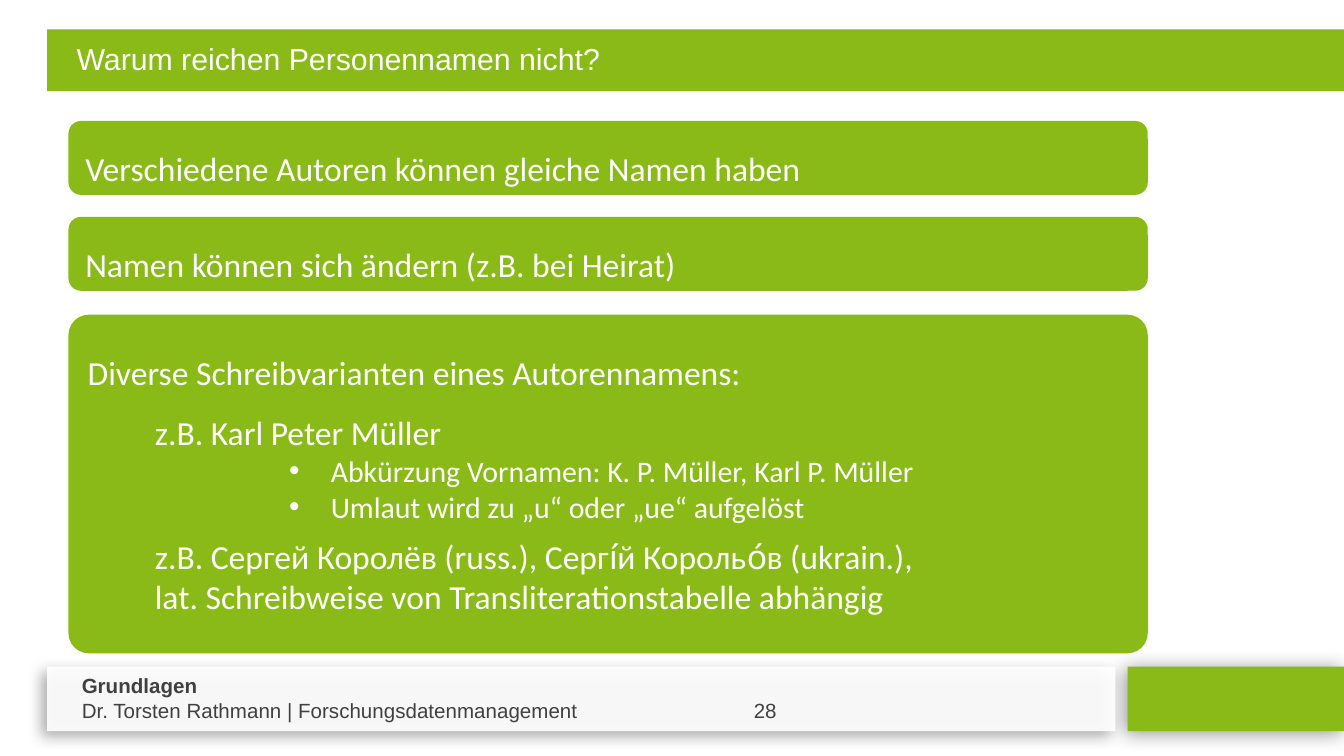
from lxml import etree
from pptx import Presentation
from pptx.dml.color import RGBColor
from pptx.enum.shapes import MSO_SHAPE
from pptx.enum.text import MSO_ANCHOR, MSO_AUTO_SIZE, PP_ALIGN
from pptx.oxml.ns import qn
from pptx.util import Pt

RECT, ROUND = MSO_SHAPE.RECTANGLE, MSO_SHAPE.ROUNDED_RECTANGLE
TOP, MIDDLE = MSO_ANCHOR.TOP, MSO_ANCHOR.MIDDLE
LEFT = PP_ALIGN.LEFT
FIXED = MSO_AUTO_SIZE.NONE

THEME = {
    "green": "89BA17", "white": "FFFFFF", "grey": "404040", "black": "000000",
    "head": "Arial", "body": "Calibri",
    "title": 16.2, "text": 18, "sub": 16, "foot": 11,
}

TITLE = "Warum reichen Personennamen nicht?"
FOOT = ["Grundlagen", "Dr. Torsten Rathmann | Forschungsdatenmanagement\t28"]

# Each paragraph: text, kind
CARDS = [
    {"top": 64.8, "high": 39.6, "round": 0.17, "paras": [
        ("Verschiedene Autoren können gleiche Namen haben", "wide")]},
    {"top": 116.2, "high": 39.6, "round": 0.17, "paras": [
        ("Namen können sich ändern (z.B. bei Heirat)", "wide")]},
    {"top": 168.6, "high": 181.4, "round": 0.06, "paras": [
        ("Diverse Schreibvarianten eines Autorennamens:", "plain"),
        ("z.B. Karl Peter Müller", "case"),
        ("Abkürzung Vornamen: K. P. Müller, Karl P. Müller", "bullet"),
        ("Umlaut wird zu „u“ oder „ue“ aufgelöst", "bullet"),
        ("z.B. Сергей Королёв (russ.), Сергі́й Корольо́в (ukrain.),\v"
         "lat. Schreibweise von Transliterationstabelle abhängig", "last")]},
]
KINDS = {
    "plain": {},
    "wide": {"lines": 1.5},
    "case": {"lines": 1.5, "margin": 36},
    "bullet": {"margin": 130.3, "hang": -22.3, "level": 4, "size": "sub"},
    "last": {"margin": 36, "before": 6},
}


def color(name):
    return RGBColor.from_string(THEME[name])


def child(node, tag, **attrs):
    return etree.SubElement(node, qn(tag), attrs)


def block(slide, kind, box, fill):
    shape = slide.shapes.add_shape(kind, *map(Pt, box))
    shape.shadow.inherit = False
    shape.fill.solid()
    shape.fill.fore_color.rgb = color(fill)
    shape.line.fill.background()
    return shape


def shade(shape, alpha, blur, dist, angle):
    """Give the shape an outer shadow; alpha in percent, angle in degrees."""
    effects = shape._element.spPr.find(qn("a:effectLst"))
    outer = child(effects, "a:outerShdw", blurRad=str(Pt(blur)),
                  dist=str(Pt(dist)), dir=str(angle * 60000),
                  algn="ctr", rotWithShape="0")
    tint = child(outer, "a:srgbClr", val=THEME["black"])
    child(tint, "a:alpha", val=str(alpha * 1000))


def style(para, face, size, tone, bold=False):
    para.alignment = LEFT
    font = para.font
    font.name, font.size = THEME[face], Pt(THEME[size])
    font.color.rgb, font.bold = color(tone), bold


def indent(para, margin, first=0):
    props = para._p.get_or_add_pPr()
    props.set("marL", str(Pt(margin)))
    props.set("indent", str(Pt(first)))
    return props


def fill_card(frame, paras):
    frame.word_wrap = True
    frame.vertical_anchor = MIDDLE
    for i, (text, kind) in enumerate(paras):
        para = frame.paragraphs[0] if i == 0 else frame.add_paragraph()
        para.text = text
        look = KINDS[kind]
        para.level = look.get("level", 0)
        props = indent(para, look.get("margin", 0), look.get("hang", 0))
        if kind == "bullet":
            child(props, "a:buFont", typeface="Arial")
            child(props, "a:buChar", char="•")
        para.line_spacing = look.get("lines", 1.0)
        para.space_before = Pt(look.get("before", 0))
        style(para, "body", look.get("size", "text"), "white")


def add_title(slide):
    block(slide, RECT, (25.2, 15.8, 697.7, 33.1), "green")
    title = slide.shapes.title
    # Placeholder comes first in the tree; lift it above the bar.
    slide.shapes._spTree.append(title._element)
    title.left, title.top, title.width, title.height = map(
        Pt, (25.2, 15.8, 697.7, 25.2))
    frame = title.text_frame
    frame.text = TITLE
    frame.auto_size = FIXED
    frame.vertical_anchor = TOP
    frame.margin_top = Pt(5.8)
    para = frame.paragraphs[0]
    indent(para, 8.6)
    style(para, "head", "title", "white")


def add_foot(slide):
    shade(block(slide, RECT, (604.1, 357.1, 115.9, 34.6), "green"),
          42, 10.8, 2, 142)
    strip = block(slide, RECT, (25.2, 357.1, 572.4, 34.6), "white")
    tint = strip._element.spPr.find(qn("a:solidFill"))[0]
    child(tint, "a:alpha", val="91000")
    shade(strip, 34, 7.5, 4, 145)

    frame = slide.shapes.add_textbox(
        *map(Pt, (36.7, 357.1, 430.6, 33.8))).text_frame
    frame.word_wrap = True
    frame.text = "\n".join(FOOT)
    tabs = child(frame.paragraphs[1]._p.get_or_add_pPr(), "a:tabLst")
    child(tabs, "a:tab", pos=str(Pt(360)), algn="l")
    for i, para in enumerate(frame.paragraphs):
        style(para, "head", "foot", "grey", bold=i == 0)


def main():
    deck = Presentation()
    deck.slide_width, deck.slide_height = Pt(720), Pt(405)
    slide = deck.slides.add_slide(deck.slide_layouts[5])
    add_foot(slide)
    add_title(slide)
    for card in CARDS:
        box = (36.7, card["top"], 578.2, card["high"])
        shape = block(slide, ROUND, box, "green")
        shape.adjustments[0] = card["round"]
        fill_card(shape.text_frame, card["paras"])
    deck.save("out.pptx")


if __name__ == "__main__":
    main()
